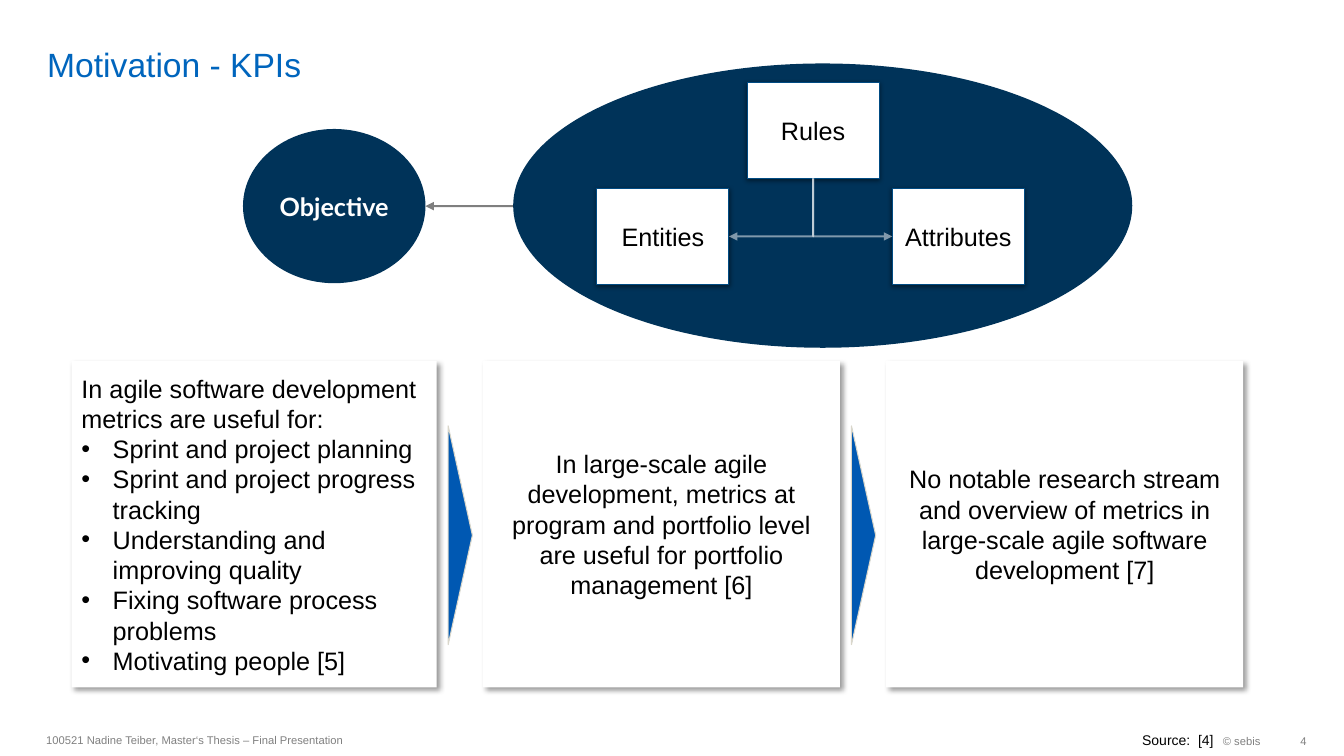
from lxml import etree
from pptx import Presentation
from pptx import util as u
from pptx.dml import color
from pptx.enum import shapes, text
from pptx.oxml import ns, parse_xml

Inches = u.Inches
COLORS = {
    "title": "0065BD", "navy": "003359", "blue": "0058B2", "edge": "004B83",
    "sand": "DAD7CB", "white": "FFFFFF", "black": "000000", "gray": "808080",
}
KIND = shapes.MSO_SHAPE
ALIGN = text.PP_ALIGN
ANCHOR = text.MSO_ANCHOR
# Shadow values: opacity %, blur pt, distance pt, angle in degrees
NODE_SHADOW = (45, 3.5, 1.1, 90)
CARD_SHADOW = (40, 4, 3, 45)

USES = [
    "Sprint and project planning",
    "Sprint and project progress tracking",
    "Understanding and improving quality",
    "Fixing software process problems",
    "Motivating people [5]",
]
SCALE = ("In large-scale agile development, metrics at program and portfolio "
         "level are useful for portfolio management [6]")
GAP = ("No notable research stream and overview of metrics in large-scale "
       "agile software development [7]")


def rgb(name):
    return color.RGBColor.from_string(COLORS[name])


def add_bullet(paragraph):
    properties = paragraph._p.get_or_add_pPr()
    properties.set("marL", str(Inches(0.31)))
    properties.set("indent", str(-Inches(0.31)))
    etree.SubElement(properties, ns.qn("a:buFont")).set("typeface", "Arial")
    etree.SubElement(properties, ns.qn("a:buChar")).set("char", "•")


def write(shape, lines, size=18, ink="black", font="Arial", bold=False,
          align=ALIGN.CENTER, anchor=ANCHOR.MIDDLE, bullets_from=None,
          right=0.1, inset=0.05):
    """Fill a shape with one paragraph per line."""
    frame = shape.text_frame
    frame.word_wrap = True
    frame.vertical_anchor = anchor
    frame.margin_left, frame.margin_right = Inches(0.1), Inches(right)
    frame.margin_top = frame.margin_bottom = Inches(inset)
    for index, line in enumerate(lines):
        paragraph = frame.add_paragraph() if index else frame.paragraphs[0]
        if bullets_from is not None and index >= bullets_from:
            add_bullet(paragraph)
        paragraph.alignment = align
        run = paragraph.add_run()
        run.text = line
        run.font.size, run.font.name, run.font.bold = u.Pt(size), font, bold
        run.font.color.rgb = rgb(ink)


def add_label(slide, box, line, **style):
    label = slide.shapes.add_textbox(*map(Inches, box))
    write(label, [line], **{"align": ALIGN.LEFT, **style})


def add_block(slide, kind, box, fill, edge=None, shadow=None):
    shape = slide.shapes.add_shape(kind, *map(Inches, box))
    shape.shadow.inherit = False
    shape.fill.solid()
    shape.fill.fore_color.rgb = rgb(fill)
    if edge:
        shape.line.color.rgb = rgb(edge)
        shape.line.width = u.Pt(0.75)
    else:
        shape.line.fill.background()
    if shadow:
        opacity, blur, distance, angle = shadow
        effects = shape._element.spPr.find(ns.qn("a:effectLst"))
        effects.append(parse_xml(
            f'<a:outerShdw {ns.nsdecls("a")} blurRad="{u.Pt(blur)}" '
            f'dist="{u.Pt(distance)}" dir="{angle * 60000}" algn="ctr" '
            f'rotWithShape="0"><a:srgbClr val="{COLORS["black"]}">'
            f'<a:alpha val="{opacity * 1000}"/></a:srgbClr></a:outerShdw>'))
    return shape


def add_arrow(slide, start, end, ink):
    """Half-transparent straight line with an arrowhead at its end."""
    arrow = slide.shapes.add_connector(
        shapes.MSO_CONNECTOR.STRAIGHT, *map(Inches, (*start, *end)))
    arrow.line.color.rgb = rgb(ink)
    arrow.line.width = u.Pt(1.35)
    properties = arrow._element.spPr
    fill = properties.find(".//" + ns.qn("a:srgbClr"))
    etree.SubElement(fill, ns.qn("a:alpha")).set("val", "50000")
    line = properties.find(ns.qn("a:ln"))
    etree.SubElement(line, ns.qn("a:tailEnd")).set("type", "triangle")
    etree.SubElement(properties, ns.qn("a:effectLst"))
    return arrow


def add_elbow(slide, start, end, ink):
    """Arrow that runs down first and then sideways."""
    (x1, y1), (x2, y2) = start, end
    across, down = abs(x2 - x1), y2 - y1
    arrow = add_arrow(slide, start, end, ink)
    # The frame is turned by a quarter, so width and height change places
    arrow.left = Inches((x1 + x2 - down) / 2)
    arrow.top = Inches((y1 + y2 - across) / 2)
    arrow.width, arrow.height = Inches(down), Inches(across)
    properties = arrow._element.spPr
    properties.find(ns.qn("a:prstGeom")).set("prst", "bentConnector2")
    frame = properties.find(ns.qn("a:xfrm"))
    to_right = x2 > x1
    frame.set("rot", str((270 if to_right else 90) * 60000))
    frame.set("flipH", "1" if to_right else "0")


def add_metric_model(slide, box):
    """Large ellipse holding the rules, entities and attributes."""
    left, top, width, height = box
    add_block(slide, KIND.OVAL, box, "navy")
    node_width, node_height = 1.31, 0.95
    places = {"Entities": (0.83, 1.24), "Attributes": (3.76, 1.24),
              "Rules": (2.32, 0.19)}
    corners = {}
    for name, (x, y) in places.items():
        corners[name] = left + x, top + y
        node = add_block(slide, KIND.RECTANGLE,
                         (*corners[name], node_width, node_height),
                         "white", "edge", NODE_SHADOW)
        write(node, [name])
    x, y = corners["Rules"]
    start = x + node_width / 2, y + node_height
    for name, side in (("Entities", node_width), ("Attributes", 0)):
        x, y = corners[name]
        add_elbow(slide, start, (x + side, y + node_height / 2), "white")


def add_objective(slide, box, source_x):
    """Small ellipse with the arrow that reaches it from the right."""
    left, top, width, height = box
    middle = top + height / 2
    write(add_block(slide, KIND.OVAL, box, "navy"), ["Objective"],
          ink="white", font="Lato", bold=True)
    add_arrow(slide, (source_x, middle), (left + width, middle), "black")


def add_cards(slide, box):
    """Three cards with a pointer in each gap."""
    left, top, width, height = box
    step, card_width = 4.0, 3.54
    cards = [
        (["In agile software development metrics are useful for:", *USES],
         0, 3.62, {"align": ALIGN.LEFT, "bullets_from": 1}),
        ([SCALE], step + 0.08, card_width, {}),
        ([GAP], width - card_width, card_width, {}),
    ]
    for lines, offset, wide, style in cards:
        card = add_block(slide, KIND.RECTANGLE,
                         (left + offset, top, wide, height), "white",
                         shadow=CARD_SHADOW)
        write(card, lines, **style)
    for index in range(2):
        pointer = add_block(slide, KIND.ISOSCELES_TRIANGLE,
                            (left + 2.77 + index * step, top + 1.61, 2.17, 0.24),
                            "blue", "sand")
        pointer.rotation = 90


def add_footer(slide, box):
    left, top, width, height = box
    small = {"size": 8, "ink": "gray"}
    add_label(slide, (left, top, 6.3, height),
              "100521 Nadine Teiber, Master‘s Thesis – Final Presentation", **small)
    add_label(slide, (left + 10.87, top + 0.03, 1.28, 0.27), "Source:  [4]",
              size=10, anchor=ANCHOR.TOP)
    add_label(slide, (left + 9.9, top + 0.01, 2.34, height), "© sebis",
              align=ALIGN.RIGHT, **small)
    add_label(slide, (left + width - 0.36, top + 0.01, 0.36, height), "4",
              align=ALIGN.RIGHT, right=0, **small)


def main():
    presentation = Presentation()
    presentation.slide_width = Inches(13.33)
    presentation.slide_height = Inches(7.5)
    slide = presentation.slides.add_slide(presentation.slide_layouts[6])

    add_metric_model(slide, (5.09, 0.63, 6.14, 2.82))
    add_label(slide, (0.37, 0.05, 11.58, 0.79), "Motivation - KPIs",
              size=24, ink="title", anchor=ANCHOR.BOTTOM, inset=0)
    add_objective(slide, (2.41, 1.28, 1.81, 1.53), source_x=5.09)
    add_cards(slide, (0.71, 3.58, 11.62, 3.24))
    add_footer(slide, (0.36, 7.18, 12.6, 0.32))
    presentation.save("out.pptx")


if __name__ == "__main__":
    main()
